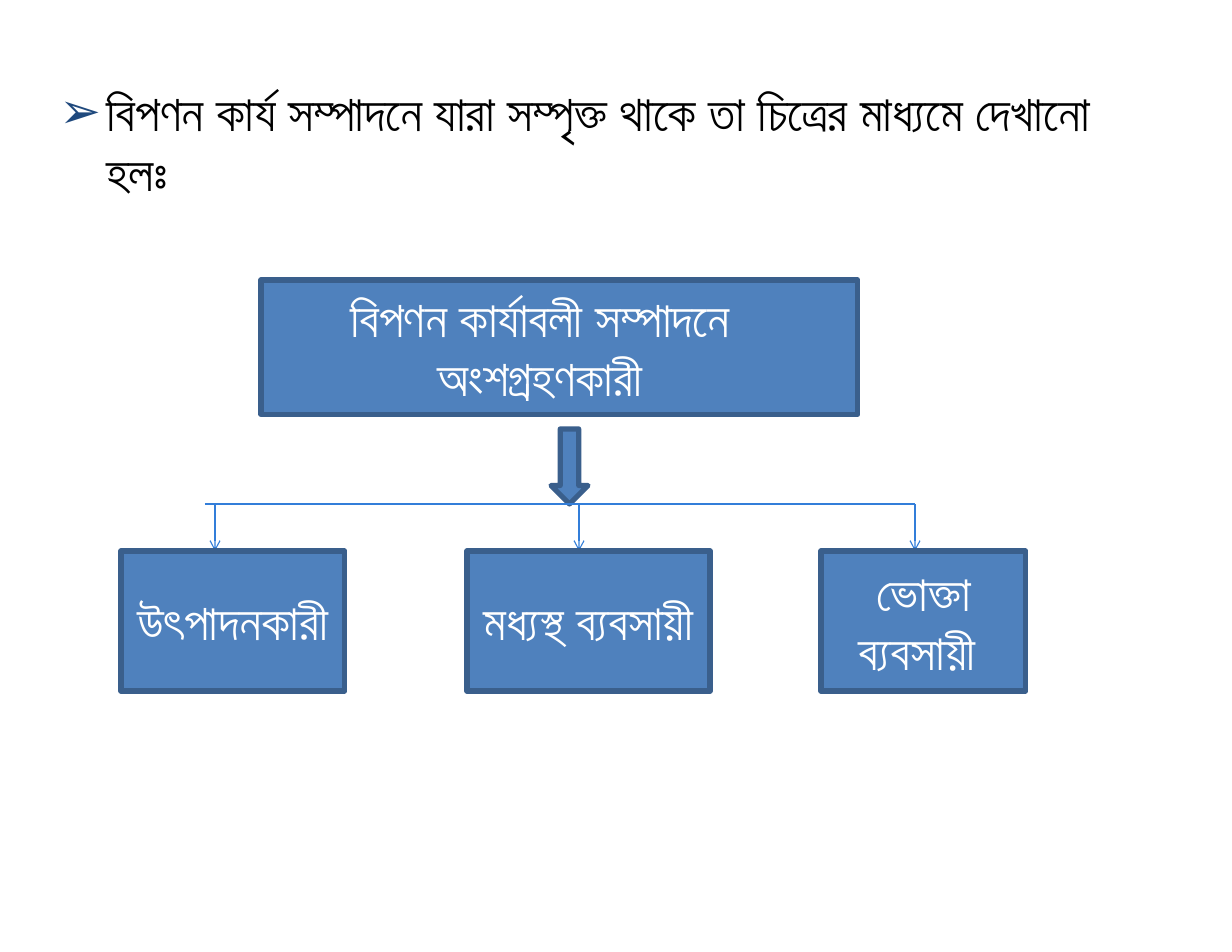
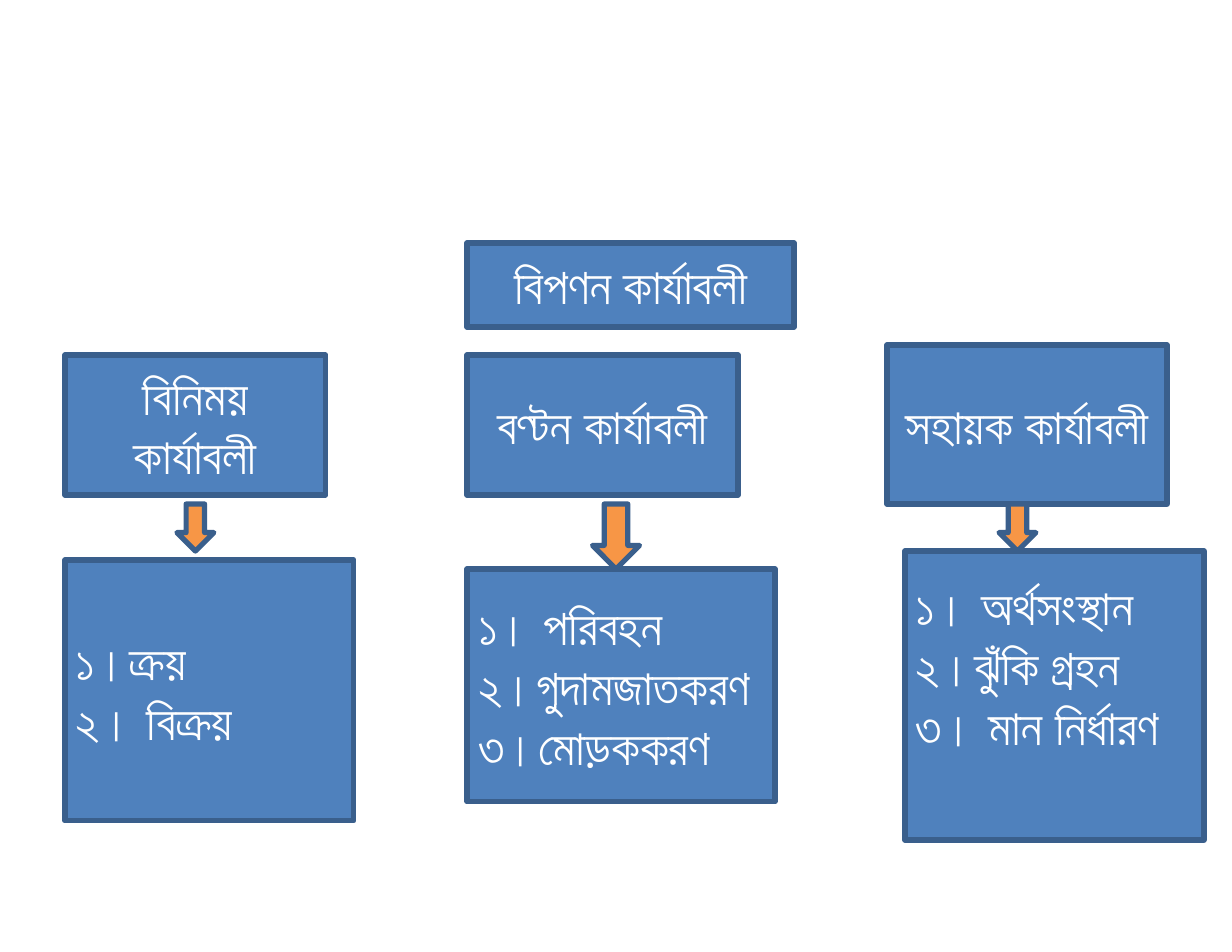
"""Builds two slides on who performs marketing and what marketing functions are."""
from lxml import etree
from pptx import Presentation
from pptx.dml.color import RGBColor
from pptx.enum.shapes import MSO_CONNECTOR, MSO_SHAPE
from pptx.enum.text import MSO_ANCHOR, MSO_AUTO_SIZE, PP_ALIGN
from pptx.oxml.ns import qn
from pptx.util import Inches, Pt

RECT, DOWN_ARROW = MSO_SHAPE.RECTANGLE, MSO_SHAPE.DOWN_ARROW
STRAIGHT = MSO_CONNECTOR.STRAIGHT
LEFT, CENTER = PP_ALIGN.LEFT, PP_ALIGN.CENTER
MIDDLE, TOP = MSO_ANCHOR.MIDDLE, MSO_ANCHOR.TOP
NO_AUTOFIT = MSO_AUTO_SIZE.NONE

COLORS = {"fill": "4F81BD", "border": "3A5F8C", "accent": "F79646", "line": "337ED9",
          "bullet": "1F497D", "dark": "000000", "light": "FFFFFF"}
FONT = "Times New Roman"
SIZE = Pt(32)
NUKTA = chr(0x09BC)
SINGLE_LETTERS = {chr(0x09AF) + NUKTA: chr(0x09DF), chr(0x09A1) + NUKTA: chr(0x09DC)}


def add_block(s, kind, box, lines=(), align=CENTER, fill="fill"):
    sp = s.shapes.add_shape(kind, *[Inches(v) for v in box])
    sp.shadow.inherit = False
    sp.fill.solid()
    sp.fill.fore_color.rgb = RGBColor.from_string(COLORS[fill])
    sp.line.color.rgb = RGBColor.from_string(COLORS["border"])
    sp.line.width = Pt(3.35)
    if lines:
        write(sp.text_frame, lines, align, "light", MIDDLE)
    return sp


def write(tf, lines, align, color, anchor):
    tf.word_wrap = True
    tf.auto_size = NO_AUTOFIT
    tf.vertical_anchor = anchor
    text = "\n".join(lines)
    for pair, letter in SINGLE_LETTERS.items():
        text = text.replace(pair, letter)
    tf.text = text
    for p in tf.paragraphs:
        p.alignment = align
        for r in p.runs:
            r.font.name = FONT
            r.font.size = SIZE
            r.font.color.rgb = RGBColor.from_string(COLORS[color])


prs = Presentation()
prs.slide_width, prs.slide_height = Inches(11), Inches(8.5)

s = prs.slides.add_slide(prs.slide_layouts[1])
title = s.shapes.title.element
title.getparent().remove(title)
body = s.placeholders[1]
body.left, body.top, body.width, body.height = [Inches(v) for v in (0.42, 0.67, 10.03, 6.93)]
tf = body.text_frame
write(tf, ["বিপণন কার্য সম্পাদনে যারা সম্পৃক্ত থাকে তা চিত্রের মাধ্যমে দেখানো হলঃ"],
      LEFT, "dark", TOP)
tf.margin_left = tf.margin_right = Inches(0.11)
tf.margin_top = tf.margin_bottom = Inches(0.06)
pPr = tf.paragraphs[0]._p.get_or_add_pPr()
pPr.set("marL", str(Inches(0.42)))
pPr.set("indent", str(-Inches(0.42)))
clr = etree.SubElement(pPr, qn("a:buClr"))
etree.SubElement(clr, qn("a:srgbClr"), val=COLORS["bullet"])
etree.SubElement(pPr, qn("a:buFont"), typeface="Arial")
etree.SubElement(pPr, qn("a:buChar"), char="➢")

add_block(s, DOWN_ARROW, (4.92, 3.83, 0.33, 0.67))
head = add_block(s, RECT, (2.33, 2.5, 5.33, 1.2), ["বিপণন কার্যাবলী সম্পাদনে অংশগ্রহণকারী"])
head.text_frame.margin_right = Inches(0.45)

rail_y, box_y = 4.5, 4.92
branches = [(x, rail_y, x, box_y) for x in (1.92, 5.17, 8.17)]
for x1, y1, x2, y2 in [(1.83, rail_y, 8.17, rail_y)] + branches:
    c = s.shapes.add_connector(STRAIGHT, Inches(x1), Inches(y1), Inches(x2), Inches(y2))
    c.line.color.rgb = RGBColor.from_string(COLORS["line"])
    c.line.width = Pt(0.75)
    if x1 == x2:
        etree.SubElement(c.line._get_or_add_ln(), qn("a:tailEnd"), type="arrow")
    etree.SubElement(c._element.spPr, qn("a:effectLst"))

for x, w, text in [(1.08, 2, "উৎপাদনকারী"), (4.17, 2.17, "মধ্যস্থ ব্যবসায়ী "),
                   (7.33, 1.83, "ভোক্তা ব্যবসায়ী ")]:
    add_block(s, RECT, (x, box_y, w, 1.25), [text])

s = prs.slides.add_slide(prs.slide_layouts[6])
add_block(s, RECT, (4.17, 2.17, 2.92, 0.75), ["বিপণন কার্যাবলী"])
groups = [
    ("বিনিময় কার্যাবলী", (0.58, 3.17, 2.33, 1.25), (1.58, 4.5, 0.33, 0.42),
     (0.58, 5, 2.58, 2.33), ["১।ক্রয়", "২। বিক্রয়"]),
    ("বণ্টন কার্যাবলী", (4.17, 3.17, 2.42, 1.25), (5.29, 4.5, 0.42, 0.58),
     (4.17, 5.08, 2.75, 2.08), ["১। পরিবহন", "২।গুদামজাতকরণ", "৩।মোড়ককরণ"]),
    ("সহায়ক কার্যাবলী", (7.92, 3.08, 2.5, 1.42), (8.92, 4.5, 0.33, 0.42),
     (8.08, 4.92, 2.67, 2.58), ["১। অর্থসংস্থান", "২।ঝুঁকি গ্রহন", "৩। মান নির্ধারণ"]),
]
for name, name_box, arrow_box, list_box, items in groups:
    add_block(s, RECT, name_box, [name])
    add_block(s, DOWN_ARROW, arrow_box, fill="accent")
    sp = add_block(s, RECT, list_box, items, LEFT)
sp.text_frame.margin_bottom = Inches(0.58)

prs.save("out.pptx")
